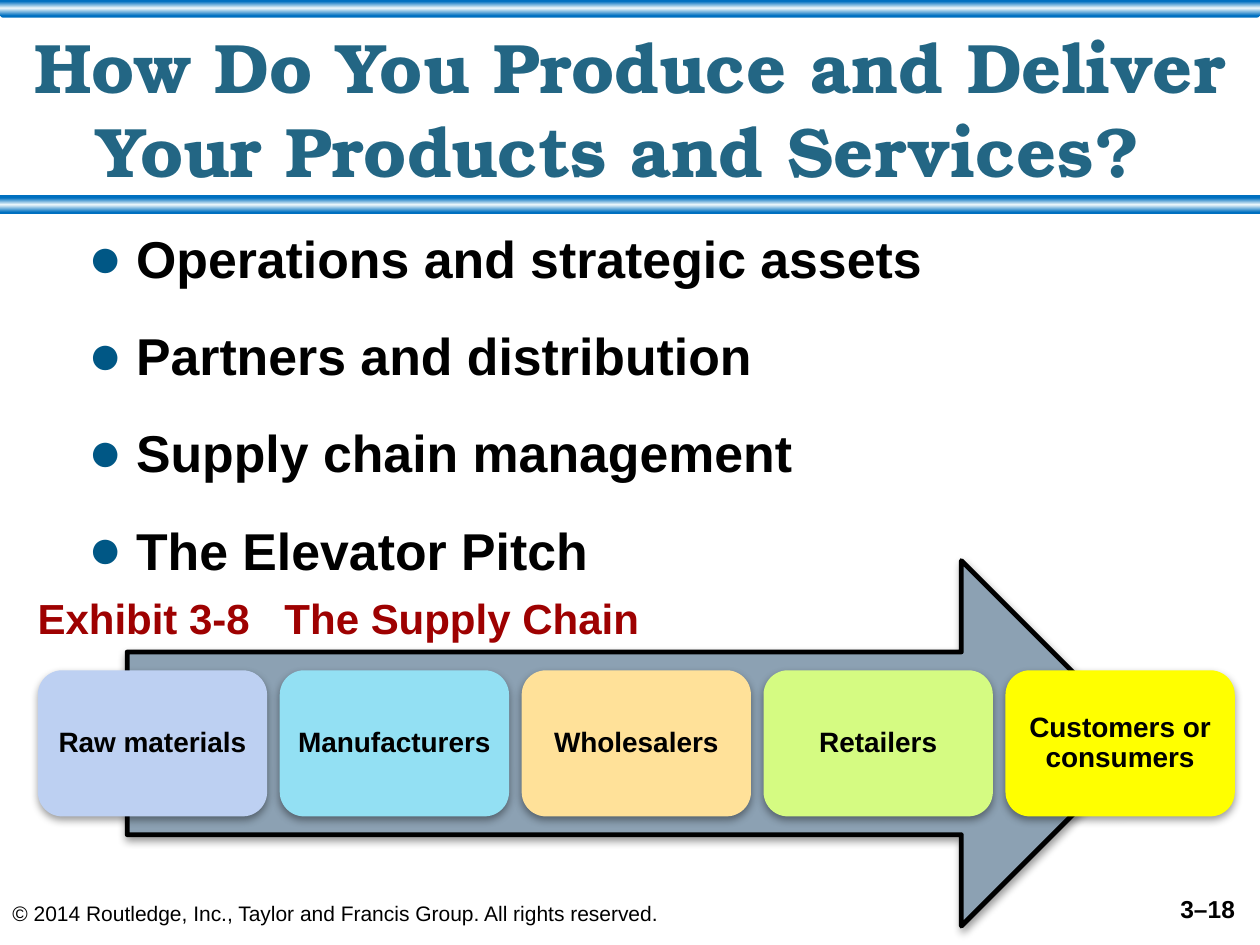
import copy
from dataclasses import dataclass
from typing import NamedTuple

import lxml.etree
import pptx
import pptx.dml.color
import pptx.enum.shapes
import pptx.enum.text
import pptx.oxml.ns
import pptx.util

HUES = {
    "band": "0070C0", "shine": "EEF8FB", "title": "236684", "dot": "005785",
    "text": "000000", "head": "9E0101", "arrow": "8CA1B3",
    "blue": "BDD0F2", "aqua": "93E0F3", "sand": "FFE199",
    "lime": "D5FB82", "sun": "FFFF00",
}
COLS, ROWS = 100, 75  # grid over the slide, one unit is 0.1 inch
KIND = pptx.enum.shapes.MSO_SHAPE
ALIGN = pptx.enum.text.PP_ALIGN
ANCHOR = pptx.enum.text.MSO_ANCHOR

deck = pptx.Presentation()
deck.slide_width = pptx.util.Inches(10)
deck.slide_height = pptx.util.Inches(7.5)
slide = deck.slides.add_slide(deck.slide_layouts[1])


class Area(NamedTuple):
    col: float
    row: float
    wide: float
    high: float

    def emu(self) -> list[int]:
        x, y = deck.slide_width / COLS, deck.slide_height / ROWS
        return [round(n * u) for n, u in zip(self, (x, y, x, y))]


@dataclass
class Stage:
    name: str
    hue: str


def color(name: str) -> pptx.dml.color.RGBColor:
    return pptx.dml.color.RGBColor.from_string(HUES[name])


def add(parent, tag: str, **attrs):
    """Append a DrawingML element."""
    node = lxml.etree.SubElement(parent, pptx.oxml.ns.qn(tag))
    for key, value in attrs.items():
        node.set(key, str(value))
    return node


def write(frame, *lines: str, size: float = 16, font: str = "Arial",
          hue: str = "text", bold: bool = True, align=ALIGN.LEFT,
          anchor=ANCHOR.TOP, gap: float = 0, lead: float = 1.0,
          bullet: str = "", tab: float = 0) -> None:
    """Fill a text frame, one paragraph a line."""
    frame.word_wrap = True
    frame.auto_size = pptx.enum.text.MSO_AUTO_SIZE.NONE
    frame.vertical_anchor = anchor
    for i, line in enumerate(lines):
        para = frame.add_paragraph() if i else frame.paragraphs[0]
        para.alignment = align
        para.line_spacing = lead
        para.space_before = pptx.util.Pt(gap if i else 0)
        props = para._p.get_or_add_pPr()
        if bullet:
            dent = pptx.util.Inches(0.38)
            props.set("marL", str(dent))
            props.set("indent", str(-dent))
            add(add(props, "a:buClr"), "a:srgbClr", val=HUES["dot"])
            add(props, "a:buSzPct", val=110000)
            add(props, "a:buFont", typeface=font)
            add(props, "a:buChar", char=bullet)
        if tab:
            stops = add(props, "a:tabLst")
            add(stops, "a:tab", pos=pptx.util.Inches(tab), algn="l")
        run = para.add_run()
        run.text = line
        run.font.size = pptx.util.Pt(size)
        run.font.name = font
        run.font.bold = bold
        run.font.color.rgb = color(hue)


def place(item, area: Area):
    item.left, item.top, item.width, item.height = area.emu()
    return item


def note(area: Area, text: str, **look) -> None:
    box = slide.shapes.add_textbox(*area.emu())
    write(box.text_frame, text, **look)


def block(kind, area: Area, hue: str):
    """Draw a filled shape without outline or shadow."""
    item = slide.shapes.add_shape(kind, *area.emu())
    item.shadow.inherit = False
    item.fill.solid()
    item.fill.fore_color.rgb = color(hue)
    item.line.fill.background()
    return item


def shade(item) -> None:
    """Drop a soft shadow straight down."""
    props = item._element.spPr
    glow = add(props.find(pptx.oxml.ns.qn("a:effectLst")), "a:outerShdw",
               blurRad=pptx.util.Pt(5), dist=pptx.util.Pt(2),
               dir=5400000, rotWithShape=0)
    add(add(glow, "a:srgbClr", val=HUES["text"]), "a:alpha", val=40000)


def band(kind, row: float) -> None:
    """Draw a full-width strip with a bright middle."""
    item = block(kind, Area(0, row, COLS, 1.5), "band")
    item.fill.gradient()
    item.fill.gradient_angle = 90
    stops = next(item._element.spPr.iter(pptx.oxml.ns.qn("a:gsLst")))
    stops.append(copy.deepcopy(stops[0]))
    marks = ((0.10, "band"), (0.50, "shine"), (0.86, "band"))
    for stop, (spot, hue) in zip(item.fill.gradient_stops, marks):
        stop.position = spot
        stop.color.rgb = color(hue)


# Bands above and below the title
band(KIND.RECTANGLE, 15.5)
band(KIND.ROUNDED_RECTANGLE, -0.1)

# Title and list
title = place(slide.shapes.title, Area(0, 1.2, COLS, 14.6))
write(title.text_frame,
      "How Do You Produce and Deliver Your Products and Services? ",
      size=40, font="TeX Gyre Bonum", hue="title",
      align=ALIGN.CENTER, anchor=ANCHOR.MIDDLE)
body = place(slide.placeholders[1], Area(6, 17.5, 88, 28))
write(body.text_frame, "Operations and strategic assets",
      "Partners and distribution", "Supply chain management",
      "The Elevator Pitch", size=29.6, gap=20, bullet="●")

# Footer
note(Area(0, 70.5, 57.1, 4),
     "© 2014 Routledge, Inc., Taylor and Francis Group. All rights reserved.",
     size=12, bold=False, anchor=ANCHOR.MIDDLE)
note(Area(88.2, 70.5, 10.8, 4), "3–18", size=14, align=ALIGN.RIGHT)

# Supply chain arrow
arrow = block(KIND.RIGHT_ARROW, Area(10.1, 44.5, 80.7, 29), "arrow")
arrow.line.color.rgb = color("text")
arrow.line.width = pptx.util.Pt(2.75)
shade(arrow)

# Stages along the arrow
STAGES = [
    Stage("Raw materials", "blue"), Stage("Manufacturers", "aqua"),
    Stage("Wholesalers", "sand"), Stage("Retailers", "lime"),
    Stage("Customers or consumers", "sun"),
]
EDGE, WIDE, STEP = 3, 18.2, 19.2
for i, stage in enumerate(STAGES):
    card = block(KIND.ROUNDED_RECTANGLE,
                 Area(EDGE + i * STEP, 53.2, WIDE, 11.6), stage.hue)
    shade(card)
    frame = card.text_frame
    frame.margin_left = frame.margin_right = pptx.util.Inches(0.07)
    frame.margin_top = frame.margin_bottom = pptx.util.Inches(0.07)
    write(frame, stage.name, lead=0.9,
          align=ALIGN.CENTER, anchor=ANCHOR.MIDDLE)

# Exhibit heading
note(Area(2, 46.5, 50.3, 5), "Exhibit 3-8\tThe Supply Chain",
     size=24, hue="head", tab=1.96)

deck.save("out.pptx")
